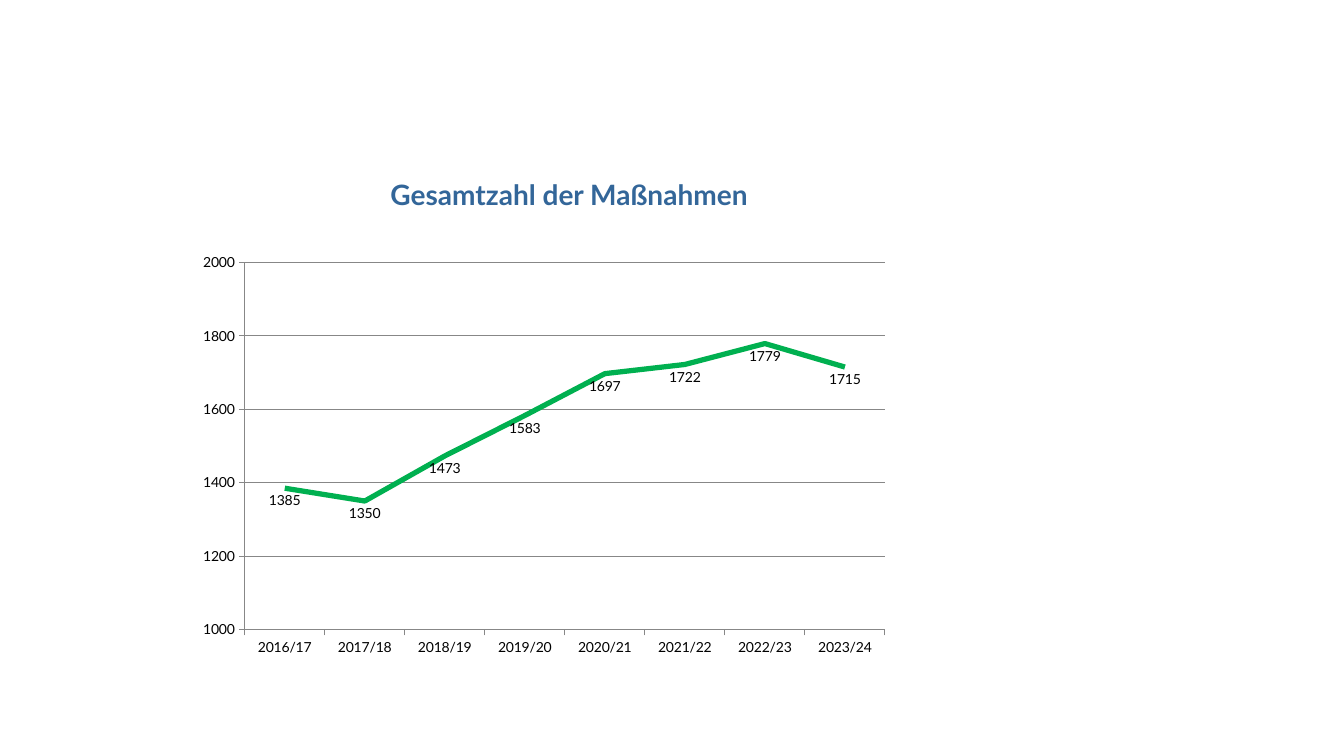
from dataclasses import dataclass

from pptx import Presentation
from pptx.chart.data import CategoryChartData
from pptx.dml.color import RGBColor
from pptx.enum.chart import XL_CHART_TYPE, XL_LABEL_POSITION, XL_MARKER_STYLE, XL_TICK_MARK
from pptx.enum.text import MSO_ANCHOR, MSO_AUTO_SIZE, PP_ALIGN
from pptx.oxml import parse_xml
from pptx.oxml.ns import nsdecls
from pptx.util import Inches, Pt


@dataclass(frozen=True)
class Theme:
    font: str = "Lato"
    title_color: RGBColor = RGBColor(0x33, 0x66, 0x99)
    text_color: RGBColor = RGBColor(0, 0, 0)
    line_color: RGBColor = RGBColor(0x00, 0xB0, 0x50)
    grid_color: RGBColor = RGBColor(0x87, 0x87, 0x87)
    title_size: Pt = Pt(20)
    label_size: Pt = Pt(10)
    line_width: Pt = Pt(3.75)
    grid_width: Pt = Pt(0.75)


THEME = Theme()
SLIDE_WIDTH, SLIDE_HEIGHT = Inches(13.33), Inches(7.5)
TITLE_BOX = (0.283, 0.227, 0.369, 0.059)
CHART_BOX = (0.0915, 0.2947, 0.7952, 0.5733)
PLOT_SHARES = {"x": 0.114, "y": 0.092, "w": 0.599, "h": 0.851}
FIRST_YEAR = 2016
MEASURES = (1385, 1350, 1473, 1583, 1697, 1722, 1779, 1715)


def set_attributes(target, **values):
    for name, value in values.items():
        setattr(target, name, value)


def to_lengths(box):
    sides = (SLIDE_WIDTH, SLIDE_HEIGHT) * 2
    return [round(share * side) for share, side in zip(box, sides)]


def set_line(line, color, width):
    line.color.rgb = color
    line.width = width


def set_font(font, color, **values):
    set_attributes(font, name=THEME.font, **values)
    font.color.rgb = color


def place_title(slide, box):
    title = slide.shapes.title
    left, top, width, height = to_lengths(box)
    set_attributes(title, left=left, top=top, width=width, height=height)
    set_attributes(title.text_frame, text="Gesamtzahl der Maßnahmen", word_wrap=True,
                   auto_size=MSO_AUTO_SIZE.NONE, vertical_anchor=MSO_ANCHOR.MIDDLE)
    paragraph = title.text_frame.paragraphs[0]
    paragraph.alignment = PP_ALIGN.LEFT
    set_font(paragraph.runs[0].font, THEME.title_color, size=THEME.title_size, bold=True)


def set_plot_layout(chart, shares):
    plot_area = chart.element.xpath(".//c:plotArea")[0]
    for layout in plot_area.xpath("./c:layout"):
        plot_area.remove(layout)
    modes = "".join(f'<c:{key}Mode val="edge"/>' for key in "xy")
    values = "".join(f'<c:{key} val="{share}"/>' for key, share in shares.items())
    plot_area.insert(0, parse_xml(
        f'<c:layout {nsdecls("c")}><c:manualLayout><c:layoutTarget val="inner"/>'
        f"{modes}{values}</c:manualLayout></c:layout>"))


def place_chart(slide, box):
    data = CategoryChartData(number_format="0")
    data.categories = [f"{year}/{(year + 1) % 100}"
                       for year in range(FIRST_YEAR, FIRST_YEAR + len(MEASURES))]
    data.add_series("Maßnahmen", MEASURES)
    chart = slide.shapes.add_chart(XL_CHART_TYPE.LINE, *to_lengths(box), data).chart
    set_attributes(chart, has_title=False, has_legend=False)
    set_font(chart.font, THEME.text_color, size=THEME.label_size)
    set_plot_layout(chart, PLOT_SHARES)

    for axis in (chart.category_axis, chart.value_axis):
        set_attributes(axis, major_tick_mark=XL_TICK_MARK.OUTSIDE,
                       minor_tick_mark=XL_TICK_MARK.NONE)
        set_line(axis.format.line, THEME.grid_color, THEME.grid_width)
    set_attributes(chart.value_axis, minimum_scale=1000, maximum_scale=2000,
                   major_unit=200, has_major_gridlines=True)
    set_line(chart.value_axis.major_gridlines.format.line, THEME.grid_color, THEME.grid_width)

    plot = chart.plots[0]
    set_attributes(plot, vary_by_categories=False, has_data_labels=True)
    set_attributes(plot.data_labels, show_value=True, position=XL_LABEL_POSITION.BELOW)
    set_font(plot.data_labels.font, THEME.text_color, size=THEME.label_size)
    series = plot.series[0]
    series.smooth = False
    series.marker.style = XL_MARKER_STYLE.NONE
    set_line(series.format.line, THEME.line_color, THEME.line_width)


def main():
    presentation = Presentation()
    set_attributes(presentation, slide_width=SLIDE_WIDTH, slide_height=SLIDE_HEIGHT)
    slide = presentation.slides.add_slide(presentation.slide_layouts.get_by_name("Title Only"))
    place_chart(slide, CHART_BOX)
    place_title(slide, TITLE_BOX)
    presentation.save("out.pptx")


if __name__ == "__main__":
    main()
